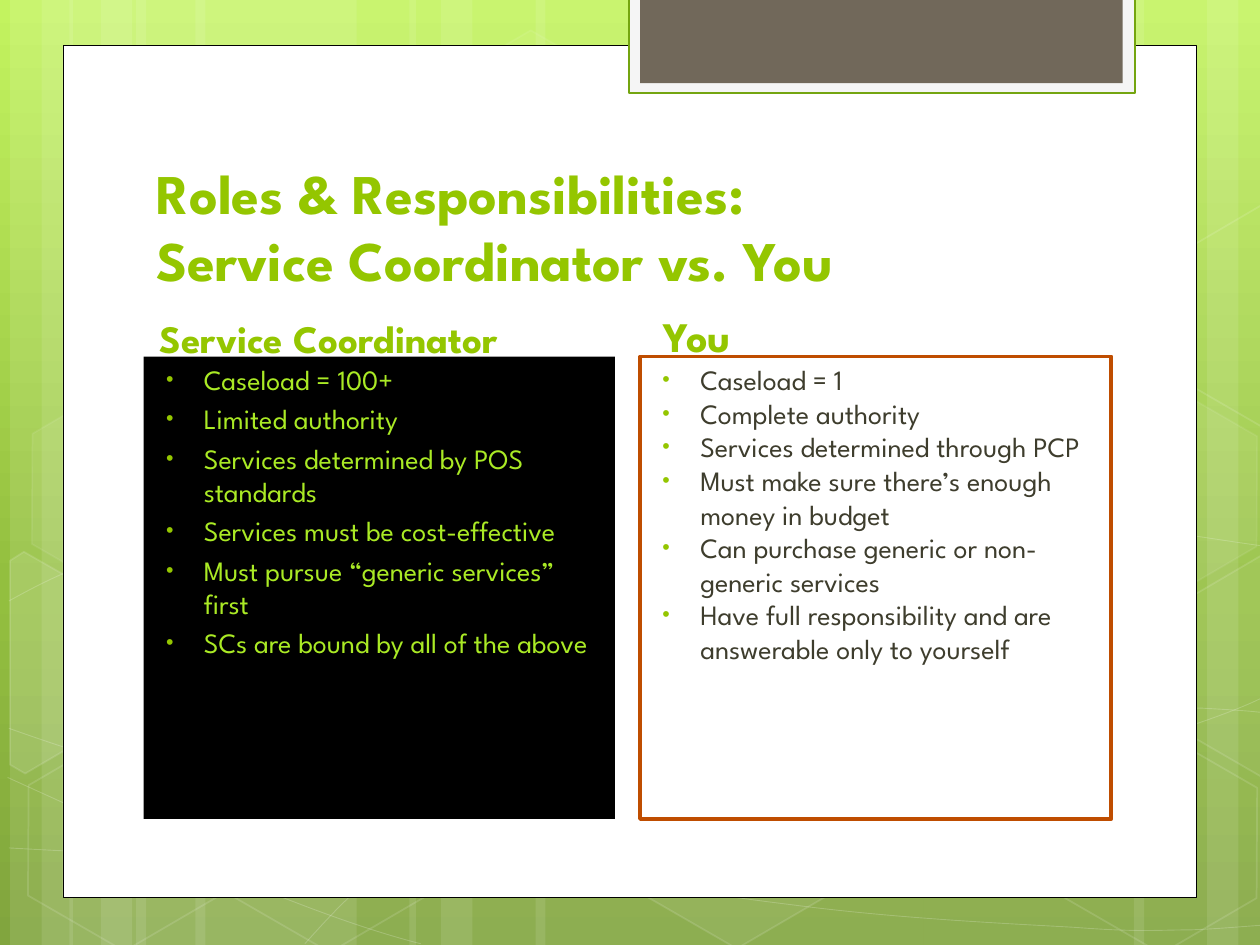
from copy import deepcopy

from lxml import etree
from pptx import Presentation
from pptx.dml.color import RGBColor
from pptx.enum.shapes import MSO_SHAPE as SHAPE
from pptx.enum.text import MSO_ANCHOR as ANCHOR
from pptx.oxml.ns import qn
from pptx.util import Inches, Pt

FONT = "League Spartan"
GREEN = "94C600"


def rgb(value):
    return RGBColor.from_string(value)


def paint(sp, fill=None, fill_alpha=100, line=None, width=1, line_alpha=100):
    """Set fill and line, with opacity in percent; None means no paint."""
    sp.shadow.inherit = False
    for part, color, alpha in ((sp.fill, fill, fill_alpha),
                               (sp.line.fill, line, line_alpha)):
        if color is None:
            part.background()
            continue
        part.solid()
        part.fore_color.rgb = rgb(color)
        if alpha < 100:
            owner = sp.line._ln if part is sp.line.fill else sp._element.spPr
            clr = owner.find(qn("a:solidFill")).find(qn("a:srgbClr"))
            etree.SubElement(clr, qn("a:alpha")).set("val", str(alpha * 1000))
    if line:
        sp.line.width = Pt(width)


prs = Presentation()
prs.slide_width, prs.slide_height = Inches(10), Inches(7.5)
s = prs.slides.add_slide(prs.slide_layouts[6])
shapes = s.shapes

# Background gradient, top to bottom
bg = s.background.fill
bg.gradient()
bg.gradient_angle = 270
stop_list = next(s.background._element.iter(qn("a:gsLst")))
stop_list.append(deepcopy(stop_list[-1]))
for stop, (position, color) in zip(
        bg.gradient_stops, ((0, "C3F35F"), (0.62, "93BF3F"), (1, "81A53E"))):
    stop.position = position
    stop.color.rgb = rgb(color)

# Vertical light bands: left, width
bands = [(1.08, 1.75), (0.08, 0.5), (0.33, 0.83), (1.55, 1.75),
         (0.55, 0.5), (0.8, 0.83), (7.33, 1.75), (9.58, 0.5),
         (9, 0.83), (4.25, 3.08), (3.25, 0.5), (3.5, 0.83)]
for left, width in bands:
    sp = shapes.add_shape(SHAPE.RECTANGLE, Inches(left), 0, Inches(width), prs.slide_height)
    paint(sp, "FFFFFF", 10)

# Thin waves: a start point, then three Bezier points per segment
waves = [
    [(0.07, 6.73), (0.61, 6.76), (1.15, 6.79), (1.9, 6.78),
     (2.65, 6.77), (3.58, 6.75), (4.58, 6.65), (5.58, 6.55), (7, 6.36), (7.92, 6.17),
     (8.83, 5.98), (9.77, 5.68), (10.07, 5.51)],
    [(0.07, 4.77), (0.36, 4.61), (0.65, 4.46), (1.21, 4.31),
     (1.78, 4.16), (2.59, 3.94), (3.47, 3.87), (4.36, 3.8), (5.44, 3.79), (6.54, 3.87),
     (7.64, 3.95), (9.47, 4.26), (10.07, 4.34)],
    [(0.06, 6.17), (1.27, 6.72), (2.47, 7.27), (3.34, 7.49)],
    [(0.07, 5.78), (0.38, 5.89), (0.7, 6), (1.28, 6.16),
     (1.86, 6.31), (2.73, 6.56), (3.57, 6.73), (4.4, 6.9), (5.45, 7.08), (6.28, 7.18),
     (7.11, 7.29), (8, 7.33), (8.53, 7.36), (9.05, 7.4), (9.19, 7.38), (9.45, 7.38),
     (9.71, 7.37), (9.89, 7.35), (10.07, 7.34)],
    [(2.42, 7.49), (2.6, 7.29), (2.78, 7.09), (3.02, 6.91),
     (3.26, 6.73), (3.6, 6.53), (3.88, 6.39), (4.16, 6.25), (4.33, 6.19), (4.7, 6.09),
     (5.06, 5.99), (5.73, 5.85), (6.08, 5.78), (6.44, 5.71), (6.49, 5.71), (6.8, 5.69),
     (7.11, 5.66), (7.6, 5.63), (7.94, 5.62), (8.29, 5.61), (8.86, 5.62), (8.86, 5.62),
     (8.86, 5.62), (9.53, 5.62), (9.53, 5.62), (9.71, 5.63), (9.88, 5.64), (9.97, 5.65),
     (10.06, 5.66), (10.03, 5.65), (10.06, 5.66)],
]
for wave in waves:
    first, *rest = [(Inches(x), Inches(y)) for x, y in wave]
    fb = shapes.build_freeform(*first)
    fb.add_line_segments(rest, close=False)
    sp = fb.convert_to_shape()
    paint(sp, line="FFFFFF", width=0.5, line_alpha=20)
    outline = next(sp._element.iter(qn("a:path")))
    segments = outline.findall(qn("a:lnTo"))
    for i in range(0, len(segments), 3):
        curve = etree.SubElement(outline, qn("a:cubicBezTo"))
        for segment in segments[i:i + 3]:
            curve.append(segment[0])
            outline.remove(segment)

# Hexagons: left, top, fill opacity (0 is unfilled), line opacity
hexagons = [(3.34, 0.36, 4, 8), (4.97, 5.89, 6, 12), (0.11, 5.91, 0, 12),
            (0.14, 3.12, 7, 8), (1.74, 5.92, 0, 12), (7.53, 4.53, 10, 12),
            (8.34, 5.93, 0, 12), (8.34, 3.14, 7, 8)]
for left, top, fill_alpha, line_alpha in hexagons:
    sp = shapes.add_shape(SHAPE.HEXAGON, Inches(left), Inches(top), Inches(1.75), Inches(1.52))
    sp.rotation = 30
    sp.adjustments[0], sp.adjustments[1] = 0.285, 1.155
    paint(sp, "FFFFFF" if fill_alpha else None, fill_alpha, "FFFFFF", 1, line_alpha)

# Hexagons cut off by the slide edges: fill opacity, corners
cut_hexagons = [
    (10, [(0.08, 4.45), (0.19, 4.38), (0.96, 4.82), (0.95, 5.7), (0.2, 6.14), (0.08, 6.07)]),
    (4, [(9.26, 4.85), (10.01, 4.41), (10.09, 4.46), (10.09, 6.13), (10.02, 6.17), (9.26, 5.73)]),
    (0, [(9.26, 2.07), (10.01, 1.63), (10.1, 1.68), (10.09, 3.35), (10.02, 3.39), (9.26, 2.95)]),
]
for fill_alpha, corners in cut_hexagons:
    first, *rest = [(Inches(x), Inches(y)) for x, y in corners]
    fb = shapes.build_freeform(*first)
    fb.add_line_segments(rest, close=True)
    paint(fb.convert_to_shape(), "FFFFFF" if fill_alpha else None, fill_alpha, "FFFFFF", 1, 12)

# White page and the tab at its top
panels = [((0.5, 0.36, 9, 6.76), "FFFFFF", "000000", 0.5),
          ((4.99, -0.02, 4.02, 0.76), "F5F5F5", "74A510", 1.25),
          ((5.08, -0.02, 3.83, 0.68), "71685A", None, 0)]
for box, fill, line, width in panels:
    sp = shapes.add_shape(SHAPE.RECTANGLE, *map(Inches, box))
    paint(sp, fill, line=line, width=width)

# Bulleted columns: left, fill, line, text colour, space before, items
columns = [
    (1.14, "000000", None, "AAEA25", 3.2,
     ["Caseload = 100+", "Limited authority", "Services determined by POS standards",
      "Services must be cost-effective", "Must pursue “generic services” first",
      "SCs are bound by all of the above"]),
    (5.08, None, "BF4D00", "3E3D2D", 0,
     ["Caseload = 1", "Complete authority", "Services determined through PCP",
      "Must make sure there’s enough money in budget",
      "Can purchase generic or non-generic services",
      "Have full responsibility and are answerable only to yourself"]),
]
for left, fill, line, color, gap, items in columns:
    sp = shapes.add_textbox(Inches(left), Inches(2.83), Inches(3.74), Inches(3.67))
    paint(sp, fill, line=line, width=2.25)
    tf = sp.text_frame
    tf.word_wrap = True
    for i, item in enumerate(items):
        p = tf.add_paragraph() if i else tf.paragraphs[0]
        p.space_before = Pt(gap)
        pPr = p._p.get_or_add_pPr()
        pPr.set("marL", str(Inches(0.38)))
        pPr.set("indent", str(Inches(-0.3)))
        bullet_color = etree.SubElement(pPr, qn("a:buClr"))
        etree.SubElement(bullet_color, qn("a:srgbClr")).set("val", GREEN)
        etree.SubElement(pPr, qn("a:buSzPct")).set("val", "76000")
        etree.SubElement(pPr, qn("a:buFont")).set("typeface", "Arial")
        etree.SubElement(pPr, qn("a:buChar")).set("char", "•")
        r = p.add_run()
        r.text = item
        r.font.name, r.font.size = FONT, Pt(16)
        r.font.color.rgb = rgb(color)

# Title and column headings
headings = [((1.14, 1.12, 7.68, 1.25), 32, ["Roles & Responsibilities:", "Service Coordinator vs. You"]),
            ((1.17, 2.25, 3.34, 0.67), 22.2, ["Service Coordinator"]),
            ((5.17, 2.33, 3.34, 0.58), 24, ["You"])]
for box, size, lines in headings:
    tf = shapes.add_textbox(*map(Inches, box)).text_frame
    tf.word_wrap = True
    tf.vertical_anchor = ANCHOR.BOTTOM
    p = tf.paragraphs[0]
    for i, text in enumerate(lines):
        if i:
            p.add_line_break()
        r = p.add_run()
        r.text = text
        r.font.name, r.font.size, r.font.bold = FONT, Pt(size), True
        r.font.color.rgb = rgb(GREEN)

prs.save("out.pptx")
